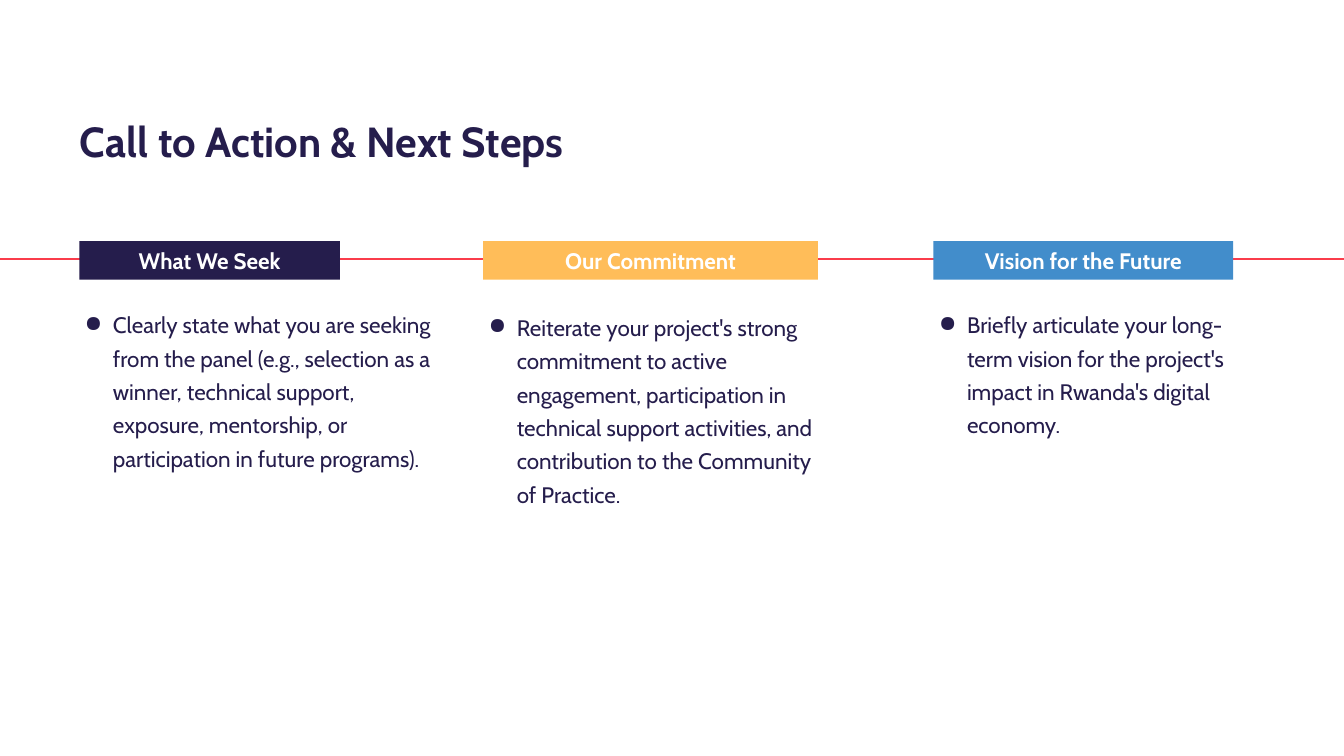
import pptx
import pptx.util
import pptx.dml.color
import pptx.enum.shapes
import pptx.enum.text
import pptx.oxml.ns
from lxml import etree

Inches = pptx.util.Inches
NAVY, WHITE, RED = "251D4C", "FFFFFF", "FA3C4B"
COLUMNS = [
    ("What We Seek", NAVY, (1.18, 3.59, 3.88), 0.95, 5.38, 2.91,
     "Clearly state what you are seeking from the panel (e.g., selection as a winner, "
     "technical support, exposure, mentorship, or participation in future programs)."),
    ("Our Commitment", "FFBD59", (7.19, 3.59, 4.98), 0.99, 4.98, 2.91,
     "Reiterate your project's strong commitment to active engagement, participation in "
     "technical support activities, and contribution to the Community of Practice."),
    ("Vision for the Future", "428DCB", (13.89, 3.59, 4.46), 0.95, 4.92, 1.91,
     "Briefly articulate your long-term vision for the project's impact in Rwanda's "
     "digital economy."),
]


def paint(target, color):
    """Give a font, a line or a fill a solid colour."""
    if hasattr(target, "solid"):
        target.solid()
        target = target.fore_color
    else:
        target = target.color
    target.rgb = pptx.dml.color.RGBColor.from_string(color)


def write(shape, text, size, color, bold, space, inset=0):
    """Fill a shape with one styled paragraph and return it."""
    frame = shape.text_frame
    frame.word_wrap = True
    frame.margin_left = frame.margin_right = Inches(inset)
    frame.margin_top = frame.margin_bottom = Inches(inset)
    para = frame.paragraphs[0]
    para.text = text
    para.line_spacing = space
    para.font.name = "Cabin"
    para.font.size = pptx.util.Pt(size)
    para.font.bold = bold
    paint(para.font, color)
    return para


def bullet(para, color):
    """Give a paragraph a round bullet and a hanging indent."""
    props = para._p.get_or_add_pPr()
    props.set("marL", str(Inches(0.5)))
    props.set("indent", str(Inches(-0.42)))
    qn = pptx.oxml.ns.qn
    tint = etree.SubElement(props, qn("a:buClr"))
    etree.SubElement(tint, qn("a:srgbClr")).set("val", color)
    etree.SubElement(props, qn("a:buChar")).set("char", "●")


def title(slide, left, top, width, height):
    """Place the slide title."""
    box = slide.shapes.add_textbox(*map(Inches, (left, top, width, height)))
    write(box, "Call to Action & Next Steps", 45, NAVY, True, 0.77)


def rule(slide, left, top, width):
    """Draw the red line that runs behind the headers."""
    line = slide.shapes.add_connector(
        pptx.enum.shapes.MSO_CONNECTOR.STRAIGHT,
        *map(Inches, (left, top, left + width, top)))
    line.line.width = pptx.util.Pt(2.25)
    paint(line.line, RED)
    etree.SubElement(line._element.spPr, pptx.oxml.ns.qn("a:effectLst"))


def column(slide, box, head, color, drop, wide, tall, body):
    """Place a coloured header and the bullet text below it."""
    left, top, width = box
    label = slide.shapes.add_shape(
        pptx.enum.shapes.MSO_SHAPE.RECTANGLE,
        *map(Inches, (left, top, width, 0.57)))
    label.shadow.inherit = False
    paint(label.fill, color)
    label.line.fill.background()
    label.text_frame.vertical_anchor = pptx.enum.text.MSO_ANCHOR.MIDDLE
    para = write(label, head, 24, WHITE, True, 1.04, 0.06)
    para.alignment = pptx.enum.text.PP_ALIGN.CENTER
    text = slide.shapes.add_textbox(*map(Inches, (left, top + drop, wide, tall)))
    bullet(write(text, body, 24, NAVY, False, 1.24), NAVY)


def main():
    """Build and save the slide."""
    deck = pptx.Presentation()
    deck.slide_width, deck.slide_height = Inches(20), Inches(11.25)
    slide = deck.slides.add_slide(deck.slide_layouts[6])
    paint(slide.background.fill, WHITE)
    title(slide, 1.19, 1.88, 9.76, 0.58)
    rule(slide, 0, 3.86, 20)
    for head, color, box, drop, wide, tall, body in COLUMNS:
        column(slide, box, head, color, drop, wide, tall, body)
    deck.save("out.pptx")


if __name__ == "__main__":
    main()
